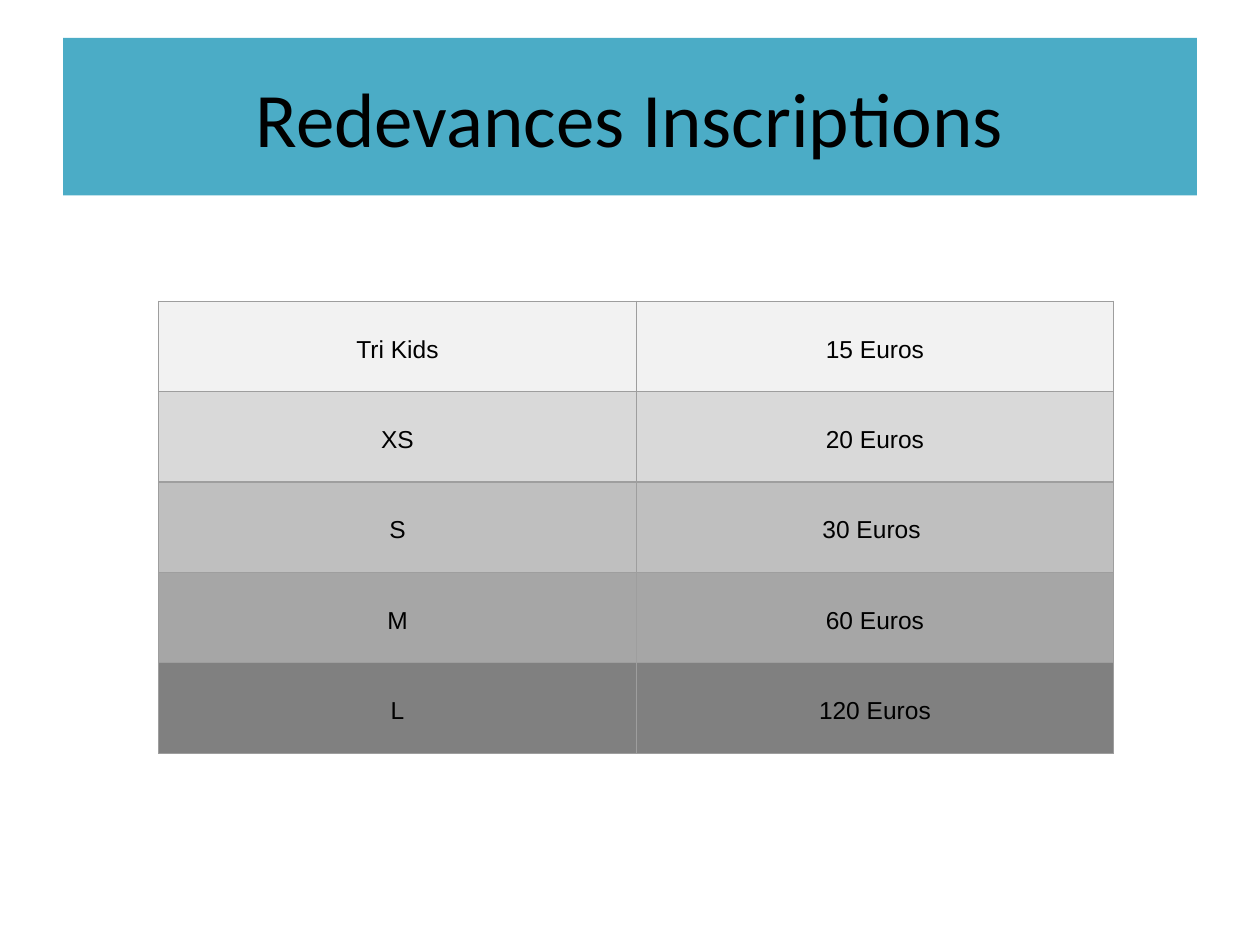
from lxml.etree import SubElement
from pptx import Presentation
from pptx.dml.color import RGBColor
from pptx.enum.text import MSO_ANCHOR, PP_ALIGN
from pptx.oxml.ns import qn
from pptx.util import Inches, Pt

COLORS = {"banner": "4BACC6", "text": "000000", "border": "9E9E9E"}
FEES = [
    ("Tri Kids", "15 Euros", "F2F2F2"),
    ("XS", "20 Euros", "D9D9D9"),
    ("S", "30 Euros ", "BFBFBF"),
    ("M", "60 Euros", "A6A6A6"),
    ("L", "120 Euros", "808080"),
]


def write_centered(frame, text, font_name, size):
    frame.vertical_anchor = MSO_ANCHOR.MIDDLE
    para = frame.paragraphs[0]
    para.alignment = PP_ALIGN.CENTER
    span = para.add_run()
    span.text = text
    span.font.name = font_name
    span.font.size = Pt(size)
    span.font.bold = False
    span.font.color.rgb = RGBColor.from_string(COLORS["text"])


def add_borders(cell):
    properties = cell._tc.get_or_add_tcPr()
    for side in ("a:lnL", "a:lnR", "a:lnT", "a:lnB"):
        line = SubElement(properties, qn(side), w=str(Pt(0.75)))
        fill = SubElement(line, qn("a:solidFill"))
        SubElement(fill, qn("a:srgbClr"), val=COLORS["border"])


deck = Presentation()
deck.slide_width, deck.slide_height = Inches(10), Inches(7.5)
page = deck.slides.add_slide(deck.slide_layouts[5])

title = page.shapes.title
title.left, title.top = Inches(0.5), Inches(0.3)
title.width, title.height = Inches(9), Inches(1.25)
title.fill.solid()
title.fill.fore_color.rgb = RGBColor.from_string(COLORS["banner"])
write_centered(title.text_frame, "Redevances Inscriptions", "Calibri", 44)

fee_table = page.shapes.add_table(
    len(FEES), 2, Inches(1.26), Inches(2.39), Inches(7.58), Inches(3.59)
).table
fee_table.first_row = False
fee_table.horz_banding = False

for row, (category, price, shade) in enumerate(FEES):
    for column, text in enumerate((category, price)):
        cell = fee_table.cell(row, column)
        add_borders(cell)
        cell.fill.solid()
        cell.fill.fore_color.rgb = RGBColor.from_string(shade)
        cell.margin_top, cell.margin_bottom = Inches(0.1), Inches(0.05)
        write_centered(cell.text_frame, text, "Arial", 14)
        cell.vertical_anchor = MSO_ANCHOR.MIDDLE

deck.save("out.pptx")
